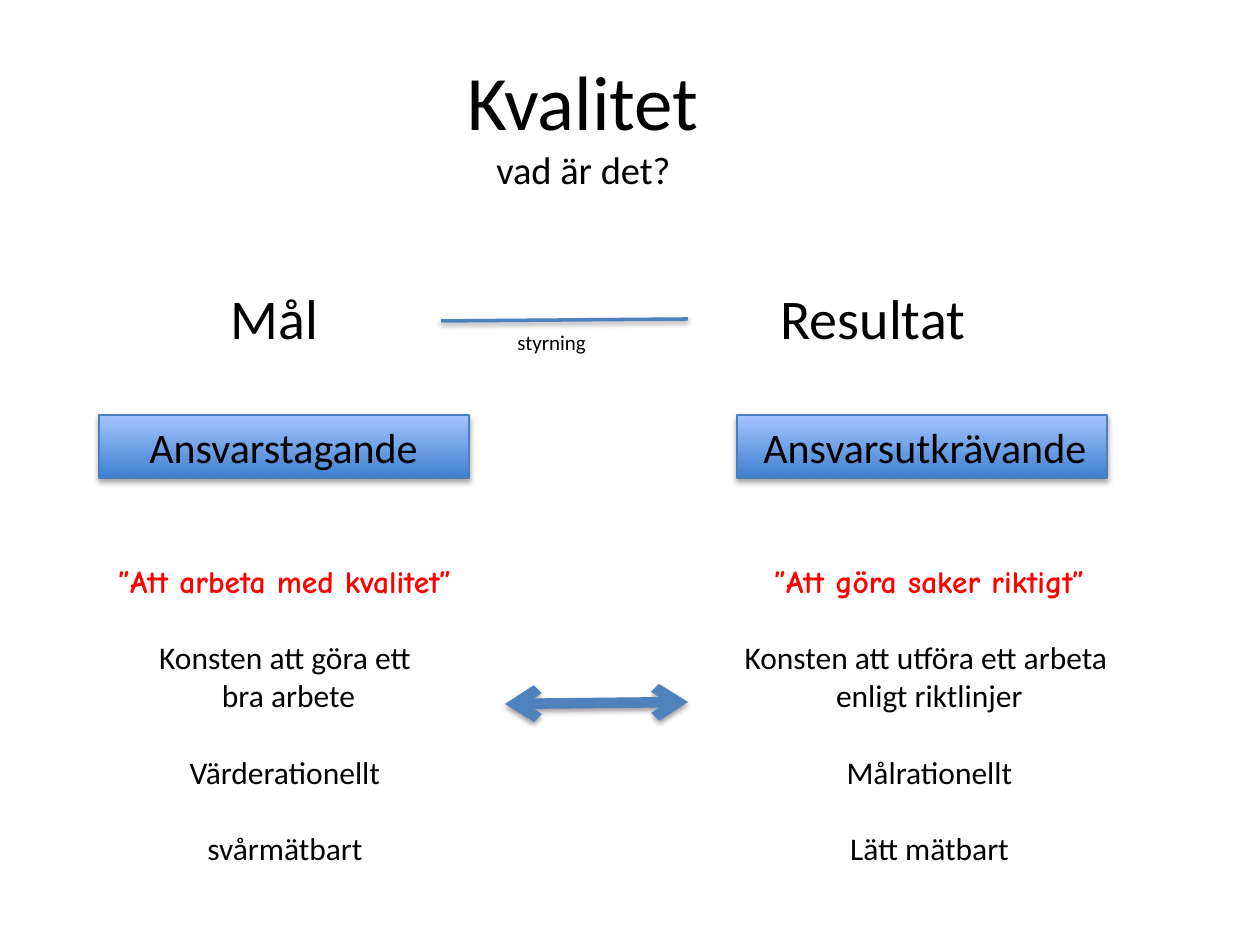
from lxml import etree
from pptx import Presentation
from pptx import util as u
from pptx.dml.color import RGBColor
from pptx.enum import shapes, text
from pptx.oxml.ns import qn

PX = 914400 / 126  # EMU in one px
CENTER, LEFT = text.PP_ALIGN.CENTER, text.PP_ALIGN.LEFT


def px(*lengths):
    return [u.Emu(round(length * PX)) for length in lengths]


def color(value):
    return RGBColor.from_string(value)


class Sheet:
    """The slide in work and the style of its elements."""
    FONT, QUOTE_FONT = "Calibri", "Comic Neue"
    BLACK, RED, BLUE, EDGE = "000000", "FF0000", "4F81BD", "4B7EBC"
    GRADIENT = "3F80CE", "A4C4FF"

    def __init__(self, slide):
        self.slide = slide

    def run(self, paragraph, words, size, font=FONT, ink=BLACK, bold=False):
        run = paragraph.add_run()
        run.text = words
        run.font.size, run.font.name, run.font.bold = u.Pt(size), font, bold
        run.font.color.rgb = color(ink)

    def shadow(self, shape, alpha, distance):
        effects = etree.SubElement(shape._element.spPr, qn("a:effectLst"))
        outer = etree.SubElement(effects, qn("a:outerShdw"), blurRad="40000",
                                 dist=str(distance), dir="5400000", rotWithShape="0")
        ink = etree.SubElement(outer, qn("a:srgbClr"), val=self.BLACK)
        etree.SubElement(ink, qn("a:alpha"), val=str(alpha * 1000))

    def title(self, box, heading, question):
        title = self.slide.shapes.title
        title.left, title.top, title.width, title.height = px(*box)
        frame = title.text_frame
        frame.auto_size = text.MSO_AUTO_SIZE.NONE
        frame.vertical_anchor = text.MSO_ANCHOR.MIDDLE
        paragraph = frame.paragraphs[0]
        paragraph.alignment = CENTER
        self.run(paragraph, heading, 44)
        paragraph.add_line_break()
        self.run(paragraph, question, 22)

    def panel(self, *box):
        panel = self.slide.shapes.add_shape(shapes.MSO_SHAPE.RECTANGLE, *px(*box))
        panel.fill.gradient()
        panel.fill.gradient_angle = 90
        for stop, position, ink in zip(panel.fill.gradient_stops, (0, 1), self.GRADIENT):
            stop.position, stop.color.rgb = position, color(ink)
        panel.line.color.rgb = color(self.EDGE)
        panel.line.width = u.Pt(0.75)
        self.shadow(panel, 35, 23000)

    def frame(self, box, wrap=False):
        frame = self.slide.shapes.add_textbox(*px(*box)).text_frame
        frame.word_wrap = wrap
        frame.auto_size = text.MSO_AUTO_SIZE.SHAPE_TO_FIT_TEXT
        return frame

    def label(self, box, words, size, align=CENTER, wrap=False):
        paragraph = self.frame(box, wrap).paragraphs[0]
        paragraph.alignment = align
        self.run(paragraph, words, size)

    def column(self, box, quote, *groups):
        frame = self.frame(box, wrap=True)
        paragraph = frame.paragraphs[0]
        paragraph.alignment = CENTER
        self.run(paragraph, quote, 18, self.QUOTE_FONT, self.RED, True)
        for group in groups:
            for index, words in enumerate(group):
                paragraph = frame.add_paragraph()
                paragraph.alignment = CENTER
                paragraph.space_before = u.Pt(0 if index else 22)
                self.run(paragraph, words, 18)

    def link(self, ends, weight, arrows=False):
        link = self.slide.shapes.add_connector(shapes.MSO_CONNECTOR.STRAIGHT, *px(*ends))
        link.line.color.rgb = color(self.BLUE)
        link.line.width = u.Pt(weight)
        if arrows:
            for end in ("a:headEnd", "a:tailEnd"):
                etree.SubElement(link.line._get_or_add_ln(), qn(end), type="arrow")
        self.shadow(link, 38, 20000)


def main():
    deck = Presentation()
    deck.slide_width, deck.slide_height = px(1260, 945)
    sheet = Sheet(deck.slides.add_slide(deck.slide_layouts[5]))

    # Panels behind the two kinds of responsibility
    for left in (737, 99):
        sheet.panel(left, 415, 370, 63)

    # Headings
    sheet.title((204, 44, 759, 158), "Kvalitet", "vad är det?")
    sheet.label((218, 277, 113, 81), "Mål", 32)
    sheet.label((766, 277, 214, 81), "Resultat", 32)

    # What each side means
    sheet.column((64, 556, 442, 318), "”Att arbeta med kvalitet”",
                 ("Konsten att göra ett", " bra arbete"),
                 ("Värderationellt",), ("svårmätbart",))
    sheet.column((722, 556, 415, 318), "”Att göra saker riktigt”",
                 ("Konsten att utföra ett arbeta ", "enligt riktlinjer"),
                 ("Målrationellt",), ("Lätt mätbart",))

    # Panel labels
    sheet.label((126, 415, 315, 102), "Ansvarstagande", 24, wrap=True)
    sheet.label((751, 415, 355, 63), "Ansvarsutkrävande", 24, LEFT)

    # Links between the two sides
    sheet.link((441, 321, 688, 319), 2)
    sheet.link((505, 704, 688, 702), 6, arrows=True)
    sheet.label((505, 323, 95, 38), "styrning", 12, LEFT)

    deck.save("out.pptx")


if __name__ == "__main__":
    main()
